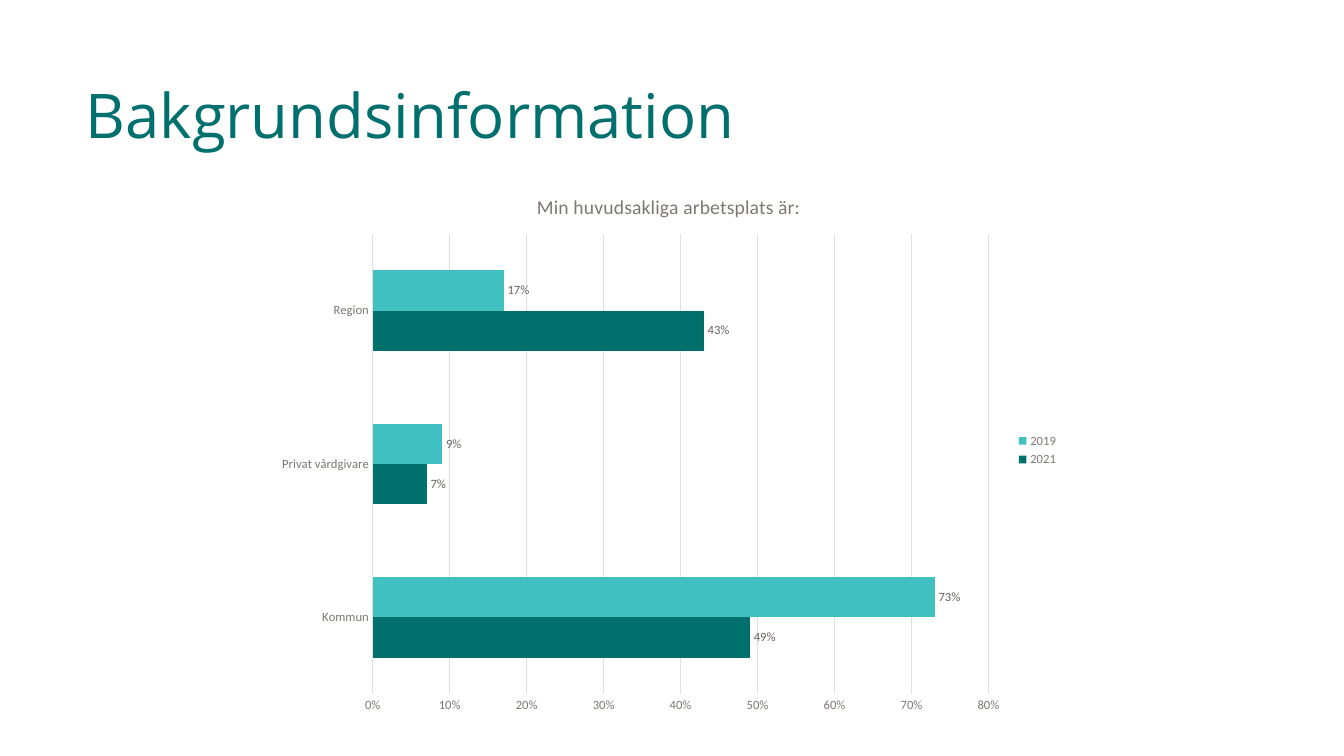
from dataclasses import dataclass

from lxml.etree import SubElement
from pptx import Presentation
from pptx.chart.data import CategoryChartData
from pptx.dml.color import RGBColor
from pptx.enum.chart import XL_CHART_TYPE, XL_LABEL_POSITION, XL_LEGEND_POSITION, XL_TICK_MARK
from pptx.enum.text import MSO_ANCHOR, MSO_AUTO_SIZE, PP_ALIGN
from pptx.oxml.ns import qn
from pptx.util import Inches, Pt


@dataclass(frozen=True)
class Theme:
    """Colours, fonts and type sizes."""
    title: str = "00706E"
    ink: str = "33302F"
    grey: str = "7E7774"
    label: str = "696260"
    rule: str = "E1DFDF"
    head: str = "Open Sans"
    body: str = "Calibri"
    big: int = 44
    mid: int = 14
    base: int = 10
    small: int = 9


class Deck:
    """Holds the style and the current slide, on a grid of 160 by 90."""

    def __init__(self, theme):
        """Open a wide deck with one title slide."""
        self.theme = theme
        self.show = Presentation()
        self.show.slide_width = Inches(13.33)
        self.show.slide_height = Inches(7.5)
        self.slide = self.show.slides.add_slide(self.show.slide_layouts[5])

    def area(self, col, row, wide, high):
        """Turn grid units into lengths."""
        x, y = self.show.slide_width / 160, self.show.slide_height / 90
        return int(col * x), int(row * y), int(wide * x), int(high * y)

    def style(self, font, size, tint, face):
        """Set size, colour and face of a font."""
        font.size, font.name, font.bold = Pt(size), face, False
        font.color.rgb = RGBColor.from_string(tint)

    def title(self, text, *area):
        """Fill and place the title."""
        box = self.slide.shapes.title
        box.left, box.top, box.width, box.height = self.area(*area)
        frame = box.text_frame
        frame.auto_size = MSO_AUTO_SIZE.NONE
        frame.vertical_anchor = MSO_ANCHOR.MIDDLE
        para = frame.paragraphs[0]
        para.alignment = PP_ALIGN.LEFT
        run = para.add_run()
        run.text = text
        self.style(run.font, self.theme.big, self.theme.title, self.theme.head)

    def line(self, form):
        """Draw a thin pale rule."""
        form.line.color.rgb = RGBColor.from_string(self.theme.rule)
        form.line.width = Pt(0.75)

    def bars(self, text, names, series, frame, *area):
        """Add a clustered bar chart from (name, values, colour) rows."""
        look = self.theme
        data = CategoryChartData(number_format="0%")
        data.categories = names
        for name, vals, _ in series:
            data.add_series(name, vals)
        chart = self.slide.shapes.add_chart(
            XL_CHART_TYPE.BAR_CLUSTERED, *self.area(*area), data).chart
        self.style(chart.font, look.base, look.ink, look.body)
        run = chart.chart_title.text_frame.paragraphs[0].add_run()
        run.text = text
        self.style(run.font, look.mid, look.grey, look.body)
        chart.chart_title.include_in_layout = False

        chart.has_legend = True
        chart.legend.position = XL_LEGEND_POSITION.RIGHT
        chart.legend.include_in_layout = False
        self.style(chart.legend.font, look.small, look.grey, look.body)

        for axis in (chart.category_axis, chart.value_axis):
            axis.major_tick_mark = axis.minor_tick_mark = XL_TICK_MARK.NONE
            self.style(axis.tick_labels.font, look.small, look.grey, look.body)
        self.line(chart.category_axis.format)
        scale = chart.value_axis
        scale.minimum_scale, scale.maximum_scale, scale.major_unit = 0, 0.8, 0.1
        scale.tick_labels.number_format = "0%"
        scale.tick_labels.number_format_is_linked = False
        scale.format.line.fill.background()
        self.line(scale.major_gridlines.format)

        plot = chart.plots[0]
        plot.gap_width, plot.overlap, plot.vary_by_categories = 182, 0, False
        for item, (_, _, tint) in zip(plot.series, series):
            item.format.fill.solid()
            item.format.fill.fore_color.rgb = RGBColor.from_string(tint)
            tags = item.data_labels
            tags.show_value = True
            tags.number_format, tags.number_format_is_linked = "0%", False
            tags.position = XL_LABEL_POSITION.OUTSIDE_END
            self.style(tags.font, look.small, look.label, look.body)
        self.inset(chart, frame)

    def inset(self, chart, frame):
        """Fix the plot's inner area as shares of the chart."""
        plot = next(chart.element.iter(qn("c:plotArea")))
        for old in plot.findall(qn("c:layout")):
            plot.remove(old)
        node = SubElement(plot, qn("c:layout"))
        plot.insert(0, node)
        inner = SubElement(node, qn("c:manualLayout"))
        rules = [("layoutTarget", "inner"), ("xMode", "edge"), ("yMode", "edge")]
        for key, val in rules + list(zip("xywh", frame)):
            SubElement(inner, qn("c:" + key)).set("val", str(val))


def main():
    """Build and save the slide."""
    deck = Deck(Theme())
    deck.title("Bakgrundsinformation", 9, 8, 140, 11.2)
    deck.bars(
        "Min huvudsakliga arbetsplats är:",
        ["Kommun", "Privat vårdgivare", "Region"],
        [("2021", (0.49, 0.07, 0.43), "00706D"),
         ("2019", (0.73, 0.09, 0.17), "41C0C1")],
        (0.13, 0.11, 0.77, 0.83),
        32, 20.6, 95.2, 66)
    deck.show.save("out.pptx")


if __name__ == "__main__":
    main()
